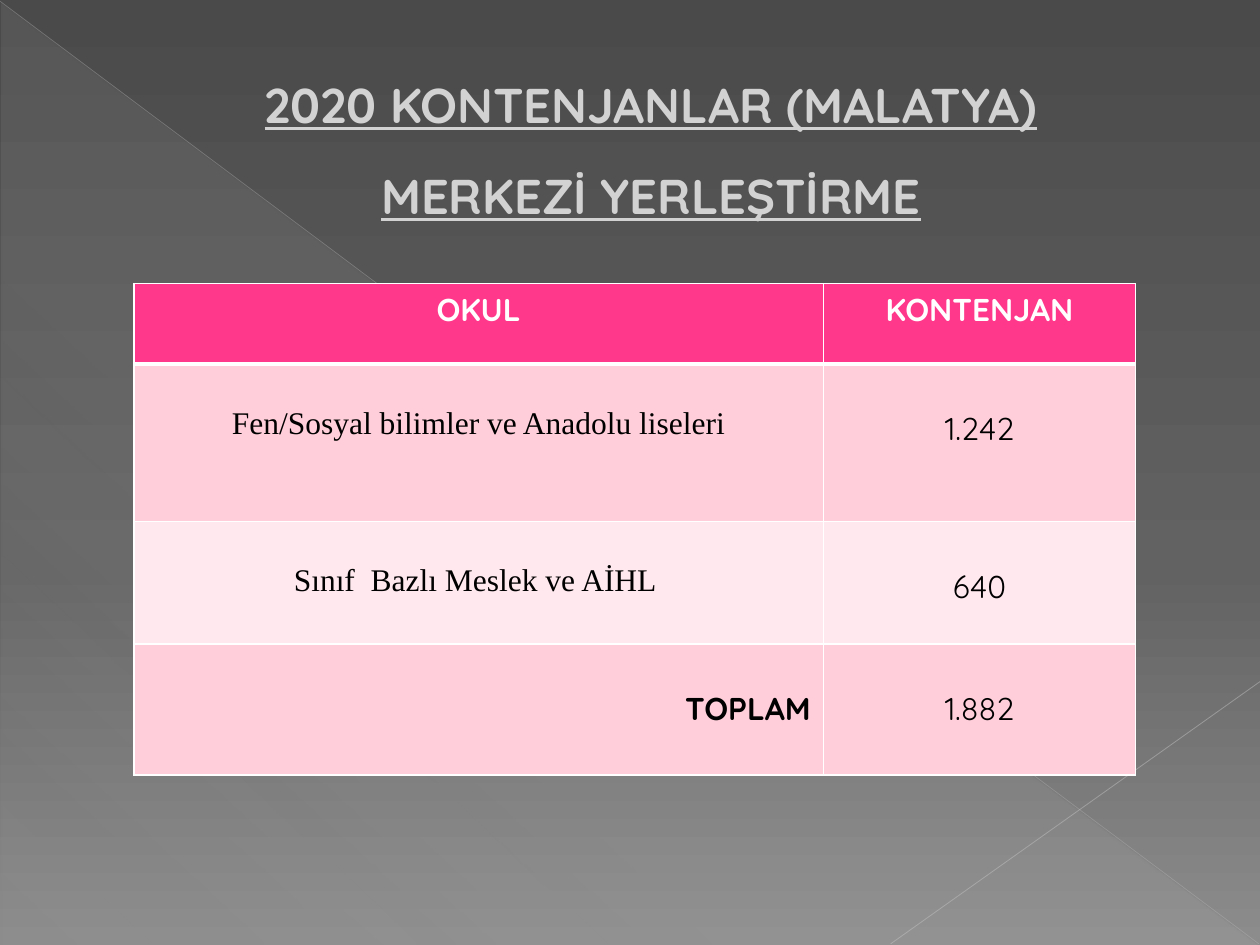
from dataclasses import dataclass

import lxml.etree
import pptx
import pptx.dml.color
import pptx.enum.dml
import pptx.enum.shapes
import pptx.enum.text
import pptx.oxml.ns
import pptx.util

Pt = pptx.util.Pt
RGB = pptx.dml.color.RGBColor
ALIGN = pptx.enum.text.PP_ALIGN
qn = pptx.oxml.ns.qn

WHITE = RGB(0xFF, 0xFF, 0xFF)
BLACK = RGB(0, 0, 0)
SILVER = RGB(0xD2, 0xD2, 0xD2)
PINK = RGB(0xFF, 0x38, 0x8C)
ROSE = RGB(0xFF, 0xCE, 0xDA)
BLUSH = RGB(0xFF, 0xE8, 0xEE)
CHARCOAL = RGB(0x4A, 0x4A, 0x4A)
SLATE = RGB(0x62, 0x62, 0x62)
ASH = RGB(0x8C, 0x8C, 0x8C)
LINE_LIGHT = RGB(0xBF, 0xBF, 0xBF)
LINE_PALE = RGB(0xC6, 0xC6, 0xC6)

SANS = "Quicksand"
SERIF = "Times New Roman"


@dataclass
class Stop:
    pos: int
    color: RGB
    alpha: int = 100


@dataclass
class Ray:
    x1: float
    y1: float
    x2: float
    y2: float
    color: RGB
    width: float
    alpha: int


@dataclass
class Cell:
    text: str
    color: RGB = BLACK
    font: str = SANS
    bold: bool = False
    align: ALIGN = ALIGN.CENTER
    top: float = 26


@dataclass
class Row:
    height: float
    fill: RGB
    cells: list[Cell]
    rule: float = 1


RAYS = [
    Ray(0, 0.7, 719.3, 539.3, LINE_LIGHT, 0.39, 35),
    Ray(720, 389.5, 509, 539.3, LINE_PALE, 0.47, 45),
]
TITLE = ["2020 KONTENJANLAR (MALATYA)", "MERKEZİ YERLEŞTİRME"]
COLUMNS = [394, 178.5]
ROWS = [
    Row(46, PINK, [Cell("OKUL", WHITE, bold=True, top=3.6),
                   Cell("KONTENJAN", WHITE, bold=True, top=3.6)], rule=3),
    Row(90, ROSE, [Cell(" Fen/Sosyal bilimler ve Anadolu liseleri ", font=SERIF, top=24),
                   Cell("1.242")]),
    Row(70, BLUSH, [Cell("Sınıf  Bazlı Meslek ve AİHL ", font=SERIF, top=24),
                    Cell("640")]),
    Row(75, ROSE, [Cell(" TOPLAM", bold=True, align=ALIGN.RIGHT), Cell("1.882")]),
]


def add_color(parent, color: RGB, alpha: int = 100) -> None:
    clr = lxml.etree.SubElement(parent, qn("a:srgbClr"), val=str(color))
    if alpha < 100:
        lxml.etree.SubElement(clr, qn("a:alpha"), val=str(alpha * 1000))


def set_gradient(fill, element, stops: list[Stop], angle: int) -> None:
    fill.gradient()
    grad = next(element.iter(qn("a:gradFill")))
    gs_lst = grad.find(qn("a:gsLst"))
    for gs in list(gs_lst):
        gs_lst.remove(gs)
    for stop in stops:
        gs = lxml.etree.SubElement(gs_lst, qn("a:gs"), pos=str(stop.pos * 1000))
        add_color(gs, stop.color, stop.alpha)
    lin = grad.find(qn("a:lin"))
    lin.set("ang", str(angle * 60000))
    lin.set("scaled", "0")


def add_run(p, text: str, font: str, size: float, color: RGB, bold: bool):
    r = p.add_run()
    r.text = text
    r.font.name = font
    r.font.size = Pt(size)
    r.font.bold = bold
    r.font.color.rgb = color
    return r


def draw_background(s) -> None:
    set_gradient(s.background.fill, s.element,
                 [Stop(0, CHARCOAL), Stop(60, SLATE), Stop(100, ASH)], 90)
    sp = s.shapes.add_shape(pptx.enum.shapes.MSO_SHAPE.RIGHT_TRIANGLE,
                            Pt(0.7), Pt(1.4), Pt(718.6), Pt(538.6))
    sp.shadow.inherit = False
    sp.line.fill.background()
    set_gradient(sp.fill, sp.element.spPr,
                 [Stop(0, SILVER, 10), Stop(70, SILVER, 8), Stop(100, SILVER, 1)], 133)


def draw_ray(s, ray: Ray) -> None:
    sp = s.shapes.add_connector(pptx.enum.shapes.MSO_CONNECTOR.STRAIGHT,
                                Pt(ray.x1), Pt(ray.y1), Pt(ray.x2), Pt(ray.y2))
    sp.line.width = Pt(ray.width)
    sp.line.color.rgb = ray.color
    clr = next(sp.element.spPr.iter(qn("a:srgbClr")))
    lxml.etree.SubElement(clr, qn("a:alpha"), val=str(ray.alpha * 1000))
    lxml.etree.SubElement(sp.element.spPr, qn("a:effectLst"))


def draw_title(s) -> None:
    sp = s.shapes.title
    sp.left, sp.top, sp.width, sp.height = Pt(48), Pt(43), Pt(648), Pt(85)
    s.shapes.element.append(sp.element)
    tf = sp.text_frame
    tf.word_wrap = True
    tf.auto_size = pptx.enum.text.MSO_AUTO_SIZE.NONE
    tf.vertical_anchor = pptx.enum.text.MSO_ANCHOR.BOTTOM
    tf.margin_left = tf.margin_right = tf.margin_bottom = 0
    tf.margin_top = Pt(3.6)
    for i, text in enumerate(TITLE):
        p = tf.add_paragraph() if i else tf.paragraphs[0]
        p.alignment = ALIGN.CENTER
        p.line_spacing = 0.8
        p.space_before = Pt(25.2 if i else 0)
        add_run(p, text, SANS, 27.9, SILVER, True).font.underline = True


def set_borders(cell, top: float, bottom: float) -> None:
    tc_pr = cell._tc.get_or_add_tcPr()
    for i, (side, width) in enumerate([("L", 1), ("R", 1), ("T", top), ("B", bottom)]):
        ln = lxml.etree.Element(qn(f"a:ln{side}"), w=str(Pt(width)))
        add_color(lxml.etree.SubElement(ln, qn("a:solidFill")), WHITE)
        tc_pr.insert(i, ln)


def draw_table(s) -> None:
    tbl = s.shapes.add_table(len(ROWS), len(COLUMNS), Pt(76.5), Pt(162),
                             Pt(sum(COLUMNS)), Pt(sum(row.height for row in ROWS))).table
    for col, width in zip(tbl.columns, COLUMNS):
        col.width = Pt(width)
    above = 1
    for i, row in enumerate(ROWS):
        tbl.rows[i].height = Pt(row.height)
        for j, item in enumerate(row.cells):
            cell = tbl.cell(i, j)
            cell.fill.solid()
            cell.fill.fore_color.rgb = row.fill
            cell.margin_top = Pt(item.top)
            set_borders(cell, above, row.rule)
            p = cell.text_frame.paragraphs[0]
            p.alignment = item.align
            add_run(p, item.text, item.font, 18, item.color, item.bold)
        above = row.rule


def main() -> None:
    prs = pptx.Presentation()
    prs.slide_width, prs.slide_height = Pt(720), Pt(540)
    s = prs.slides.add_slide(prs.slide_layouts[5])
    draw_background(s)
    for ray in RAYS:
        draw_ray(s, ray)
    draw_title(s)
    draw_table(s)
    prs.save("out.pptx")


if __name__ == "__main__":
    main()
